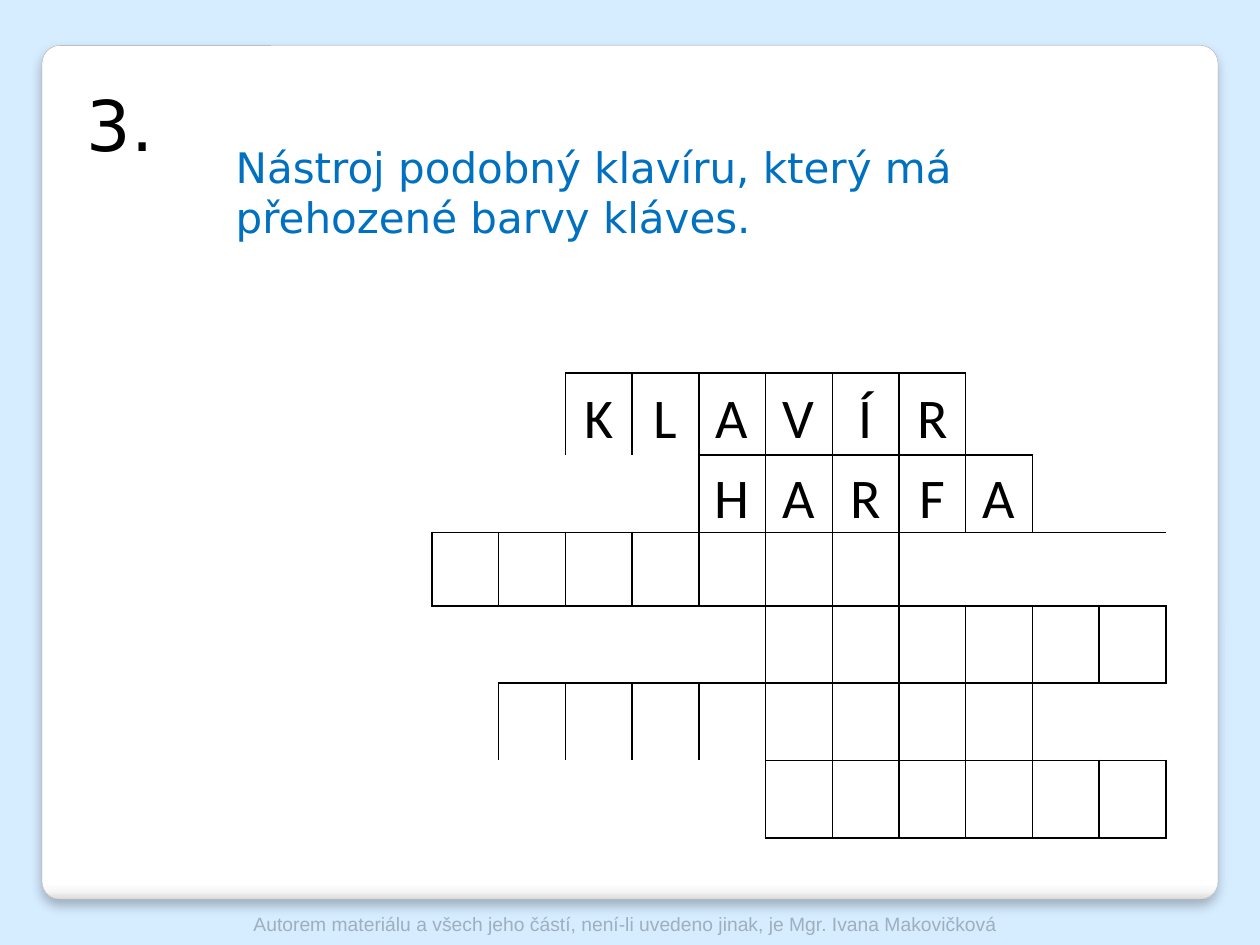
from dataclasses import dataclass
from itertools import groupby

from lxml.etree import SubElement
from pptx import Presentation
from pptx.dml.color import RGBColor
from pptx.enum.shapes import MSO_SHAPE
from pptx.enum.text import MSO_ANCHOR, MSO_AUTO_SIZE, PP_ALIGN
from pptx.oxml import parse_xml
from pptx.oxml.ns import nsdecls, qn
from pptx.util import Pt


@dataclass(frozen=True)
class Theme:
    sky: str = "D6ECFF"
    ink: str = "000000"
    question: str = "0070C0"
    footer: str = "9EAFBD"
    edge: str = "A4A4A4"
    card_stops: tuple = ((0, "FFFFFF"), (98, "FFFFFF"), (99, "F7F7F7"), (100, "DADADA"))
    heading_font: str = "DejaVu Sans"
    letter_font: str = "Calibri"
    footer_font: str = "Arial"
    number_size: int = 40
    letter_size: int = 32
    question_size: int = 24
    footer_size: int = 11


def apply(target, values):
    for name, value in values.items():
        setattr(target, name, value)


class CrosswordPage:
    def __init__(self, deck, theme):
        self.theme = theme
        self.page = deck.slides.add_slide(deck.slide_layouts[1])
        background = self.page.background.fill
        background.solid()
        background.fore_color.rgb = RGBColor.from_string(theme.sky)

    def place(self, shape, frame):
        apply(shape, dict(zip(("left", "top", "width", "height"), map(Pt, frame))))

    def add_text(self, frame, text, font, size, color, align, spacing=1.0):
        para = frame.paragraphs[0]
        apply(para, {"alignment": align, "line_spacing": spacing, "space_before": Pt(0)})
        span = para.add_run()
        span.text = text
        apply(span.font, {"name": font, "size": Pt(size)})
        span.font.color.rgb = RGBColor.from_string(color)
        return para

    def card(self, frame):
        card = self.page.shapes.add_shape(MSO_SHAPE.ROUNDED_RECTANGLE, *map(Pt, frame))
        card.adjustments[0] = 0.021
        card.fill.gradient()
        card.fill.gradient_angle = 270
        stops = card.element.spPr.find(qn("a:gradFill")).find(qn("a:gsLst"))
        stops.clear()
        for position, color in self.theme.card_stops:
            stop = SubElement(stops, qn("a:gs"), pos=str(position * 1000))
            SubElement(stop, qn("a:srgbClr"), val=color)
        card.line.width = Pt(0.16)
        card.line.color.rgb = RGBColor.from_string(self.theme.edge)
        card.element.spPr.append(parse_xml(
            f'<a:effectLst {nsdecls("a")}><a:outerShdw blurRad="{Pt(6)}" dist="{Pt(4)}" '
            f'dir="5400000" rotWithShape="0"><a:srgbClr val="{self.theme.ink}">'
            '<a:alpha val="25000"/></a:srgbClr></a:outerShdw></a:effectLst>'))
        card.element.getparent().insert(2, card.element)

    def placeholder(self, index, frame, text, size, color):
        box = self.page.placeholders[index]
        self.place(box, frame)
        apply(box.text_frame, {"word_wrap": True, "vertical_anchor": MSO_ANCHOR.TOP,
                               "auto_size": MSO_AUTO_SIZE.SHAPE_TO_FIT_TEXT})
        para = self.add_text(box.text_frame, text, self.theme.heading_font, size, color,
                             PP_ALIGN.LEFT)
        properties = para._p.get_or_add_pPr()
        properties.set("marL", "0")
        properties.set("indent", "0")
        SubElement(properties, qn("a:buNone"))

    def footer(self, frame, text):
        box = self.page.shapes.add_textbox(*map(Pt, frame))
        apply(box.text_frame, {"word_wrap": True, "margin_top": Pt(0), "margin_bottom": Pt(0)})
        self.add_text(box.text_frame, text, self.theme.footer_font, self.theme.footer_size,
                      self.theme.footer, PP_ALIGN.CENTER)

    def borders(self, cell, sides):
        cell.fill.background()
        for index, side in enumerate("LRTB"):
            paint = (f'<a:solidFill><a:srgbClr val="{self.theme.ink}"/></a:solidFill>'
                     if side in sides else "<a:noFill/>")
            cell._tc.get_or_add_tcPr().insert(index, parse_xml(
                f'<a:ln{side} {nsdecls("a")} w="{Pt(1)}">{paint}</a:ln{side}>'))

    def crossword(self, left, top, column_width, heights, rows, gap_edges):
        count = len(rows[0])
        shape = self.page.shapes.add_table(len(rows), count, Pt(left), Pt(top),
                                           Pt(column_width * count), Pt(sum(heights)))
        table = shape.table
        apply(table, {"first_row": False, "horz_banding": False})
        for column in table.columns:
            column.width = Pt(column_width)
        for y, (height, word) in enumerate(zip(heights, rows)):
            table.rows[y].height = Pt(height)
            for is_gap, group in groupby(range(count), lambda x: word[x] == "."):
                places = list(group)
                if is_gap:
                    self.gap(table, y, places, gap_edges.get((y, places[0]), ""))
                else:
                    for x in places:
                        self.square(table.cell(y, x), word[x])

    def gap(self, table, y, places, edges):
        first, last = places[0], places[-1]
        if first < last:
            table.cell(y, first).merge(table.cell(y, last))
        toward_word = "R" if first == 0 else "L"
        for x in places:
            self.borders(table.cell(y, x), edges + toward_word)

    def square(self, cell, letter):
        self.borders(cell, "LRTB")
        apply(cell, {"vertical_anchor": MSO_ANCHOR.MIDDLE, "margin_left": Pt(5),
                     "margin_right": Pt(5), "margin_top": Pt(0), "margin_bottom": Pt(0)})
        if letter != "_":
            self.add_text(cell.text_frame, letter, self.theme.letter_font,
                          self.theme.letter_size, self.theme.ink, PP_ALIGN.CENTER, 1.15)


def main():
    deck = Presentation()
    apply(deck, {"slide_width": Pt(720), "slide_height": Pt(540)})
    theme = Theme()
    page = CrosswordPage(deck, theme)
    page.card((24, 26, 672, 488))
    page.placeholder(0, (42.5, 43.2, 57, 55.4), "3.", theme.number_size, theme.ink)
    page.placeholder(1, (127.5, 77, 453.6, 65.5),
                     "Nástroj podobný klavíru, který má přehozené barvy kláves.",
                     theme.question_size, theme.question)
    page.crossword(
        246.8, 213.2, 38.15, (46.8, 42, 42, 44.2, 44.2, 44.2),
        ("..KLAVÍR...",
         "....HARFA..",
         "_______....",
         ".....______",
         ".________..",
         ".....______"),
        {(0, 8): "B", (1, 0): "B", (2, 7): "TB", (3, 0): "T", (4, 9): "TB"})
    page.footer((100.8, 521.5, 513.4, 28.8),
                "Autorem materiálu a všech jeho částí, není-li uvedeno jinak, "
                "je Mgr. Ivana Makovičková")
    deck.save("out.pptx")


if __name__ == "__main__":
    main()
